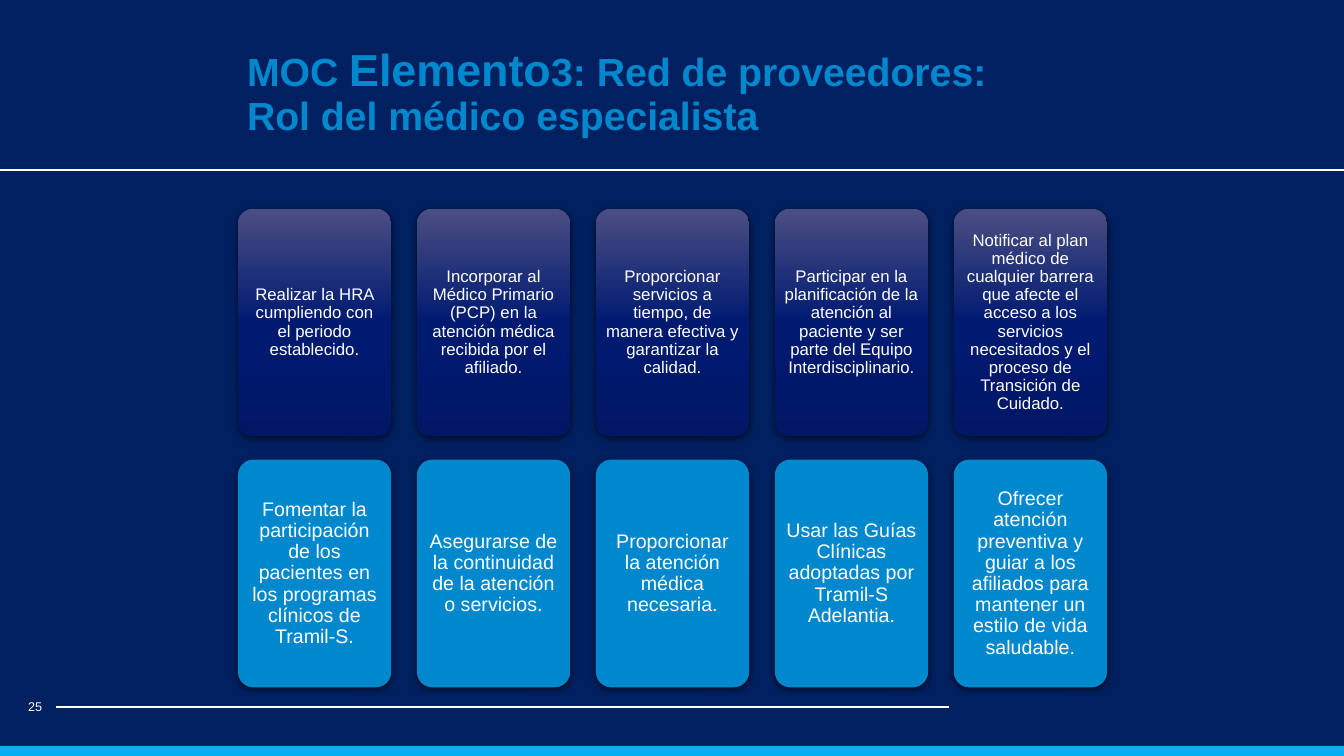
import copy
import lxml.etree
import pptx
import pptx.dml.color
import pptx.enum.shapes
import pptx.enum.text
import pptx.oxml.ns
import pptx.util

Inches, Pt = pptx.util.Inches, pptx.util.Pt
RGB = pptx.dml.color.RGBColor.from_string
SHAPE = pptx.enum.shapes.MSO_SHAPE
ALIGN = pptx.enum.text.PP_ALIGN
MIDDLE = pptx.enum.text.MSO_ANCHOR.MIDDLE
qn = pptx.oxml.ns.qn

COLORS = {
    "background": "002060",
    "white": "FFFFFF",
    "blue": "0088CE",
    "band": "00B0F0",
    "shadow": "000000",
    "top": "4B4E83",
    "middle": "001A72",
    "bottom": "001765",
}


def add_text(p, text, size=12, color="white", bold=False, align=ALIGN.LEFT, spacing=0.9):
    p.alignment = align
    p.line_spacing = spacing
    r = p.add_run()
    r.text = text
    r.font.name = "Arial"
    r.font.size = Pt(size)
    r.font.bold = bold
    r.font.color.rgb = RGB(COLORS[color])


def add_shadow(sp):
    sp.shadow.inherit = False
    effects = sp._element.spPr.find(qn("a:effectLst"))
    outer = lxml.etree.SubElement(
        effects, qn("a:outerShdw"), blurRad=str(Pt(4.5)), dist=str(Pt(1.5)),
        dir="5400000", algn="ctr", rotWithShape="0")
    color = lxml.etree.SubElement(outer, qn("a:srgbClr"), val=COLORS["shadow"])
    lxml.etree.SubElement(color, qn("a:alpha"), val="63000")


prs = pptx.Presentation()
prs.slide_width, prs.slide_height = Inches(13.33), Inches(7.5)
s = prs.slides.add_slide(prs.slide_layouts[5])
s.background.fill.solid()
s.background.fill.fore_color.rgb = RGB(COLORS["background"])

# Rules, bottom band and page number
for x1, x2, y in [(0, 13.33, 1.69), (0.56, 9.41, 7.01)]:
    line = s.shapes.add_connector(
        pptx.enum.shapes.MSO_CONNECTOR.STRAIGHT,
        Inches(x1), Inches(y), Inches(x2), Inches(y))
    line.line.color.rgb = RGB(COLORS["white"])
    line.line.width = Pt(1.5)
    lxml.etree.SubElement(line._element.spPr, qn("a:effectLst"))

band = s.shapes.add_shape(SHAPE.RECTANGLE, 0, Inches(7.4), prs.slide_width, Inches(0.1))
band.shadow.inherit = False
band.fill.solid()
band.fill.fore_color.rgb = RGB(COLORS["band"])
band.line.fill.background()

number = s.shapes.add_textbox(Inches(0.18), Inches(6.81), Inches(0.44), Inches(0.4))
tf = number.text_frame
tf.word_wrap = True
tf.vertical_anchor = MIDDLE
add_text(tf.paragraphs[0], "25", size=9, spacing=1)

# Title
title = s.shapes.title
title.left, title.top = Inches(2.35), Inches(0.2)
title.width, title.height = Inches(8.62), Inches(1.45)
tf = title.text_frame
tf.auto_size = pptx.enum.text.MSO_AUTO_SIZE.NONE
tf.vertical_anchor = MIDDLE
p = tf.paragraphs[0]
for text, size in [("MOC ", 28), ("Elemento", 32), ("3: Red de proveedores:", 28)]:
    add_text(p, text, size=size, color="blue", bold=True)
p.add_line_break()
add_text(p, "Rol del médico especialista", size=28, color="blue", bold=True)

# Two rows of role cards: top, text size, inset, colours of the fill, texts
ROWS = [
    (2.07, 12, 0.05, ["top", "middle", "bottom"], [
        "Realizar la HRA cumpliendo con el periodo establecido.",
        "Incorporar al Médico Primario (PCP) en la atención médica recibida por el afiliado.",
        "Proporcionar servicios a tiempo, de manera efectiva y garantizar la calidad.",
        "Participar en la planificación de la atención al paciente y ser parte del Equipo "
        "Interdisciplinario.",
        "Notificar al plan médico de cualquier barrera que afecte el acceso a los servicios "
        "necesitados y el proceso de Transición de Cuidado.",
    ]),
    (4.56, 14, 0.06, ["blue"], [
        "Fomentar la participación de los pacientes en los programas clínicos de Tramil-S.",
        "Asegurarse de la continuidad de la atención o servicios.",
        "Proporcionar la atención médica necesaria.",
        "Usar las Guías Clínicas adoptadas por Tramil-S Adelantia.",
        "Ofrecer atención preventiva y guiar a los afiliados para mantener un estilo de vida "
        "saludable.",
    ]),
]
LEFT, PITCH = 2.36, 7.1 / 4

for top, size, inset, fills, texts in ROWS:
    for i, text in enumerate(texts):
        card = s.shapes.add_shape(
            SHAPE.ROUNDED_RECTANGLE, Inches(LEFT + i * PITCH), Inches(top),
            Inches(1.52), Inches(2.26))
        card.adjustments[0] = 0.1
        card.line.fill.background()
        if len(fills) == 1:
            card.fill.solid()
            card.fill.fore_color.rgb = RGB(COLORS[fills[0]])
        else:
            card.fill.gradient()
            card.fill.gradient_angle = 270
            stops = card._element.spPr.find(".//" + qn("a:gsLst"))
            stops.append(copy.deepcopy(stops[0]))
            for k, stop in enumerate(card.fill.gradient_stops):
                stop.position = k / 2
                stop.color.rgb = RGB(COLORS[fills[k]])
        add_shadow(card)
        tf = card.text_frame
        tf.word_wrap = True
        tf.vertical_anchor = MIDDLE
        tf.margin_left = tf.margin_right = tf.margin_top = tf.margin_bottom = Inches(inset)
        add_text(tf.paragraphs[0], text, size=size, align=ALIGN.CENTER)

prs.save("out.pptx")
